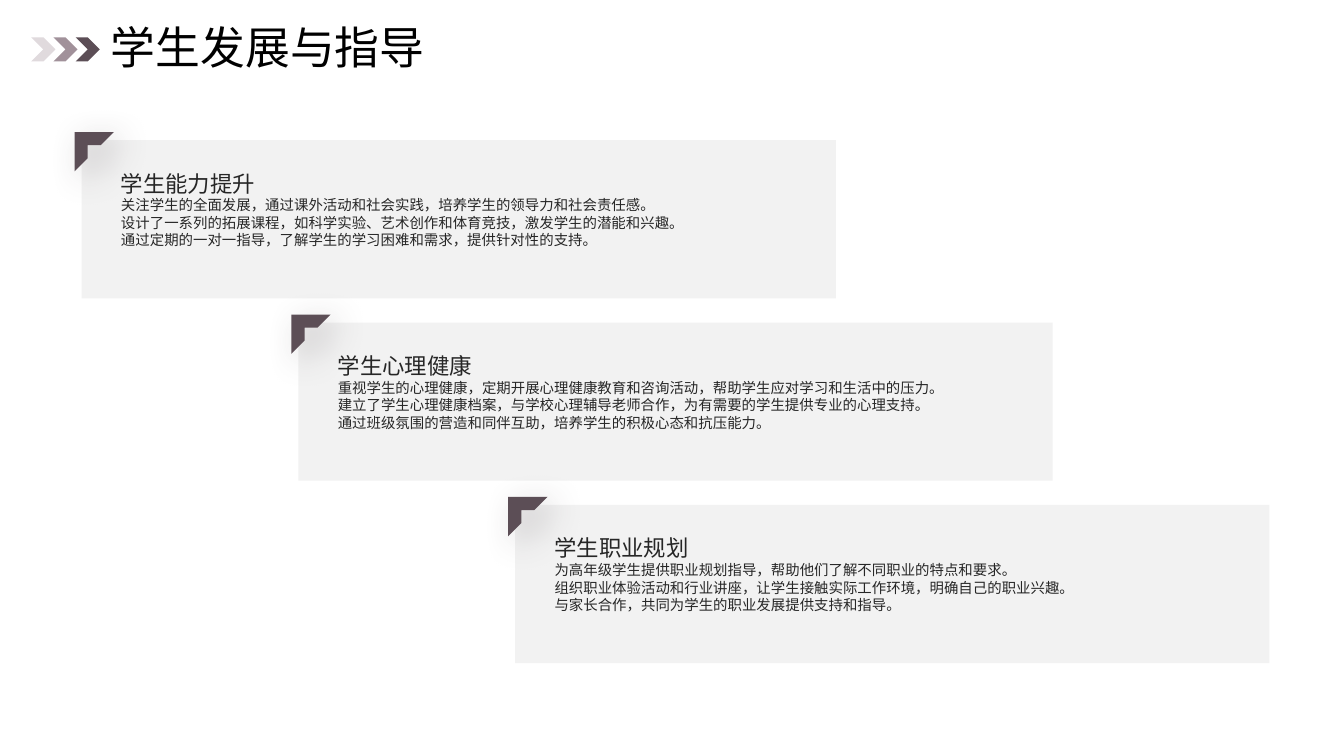
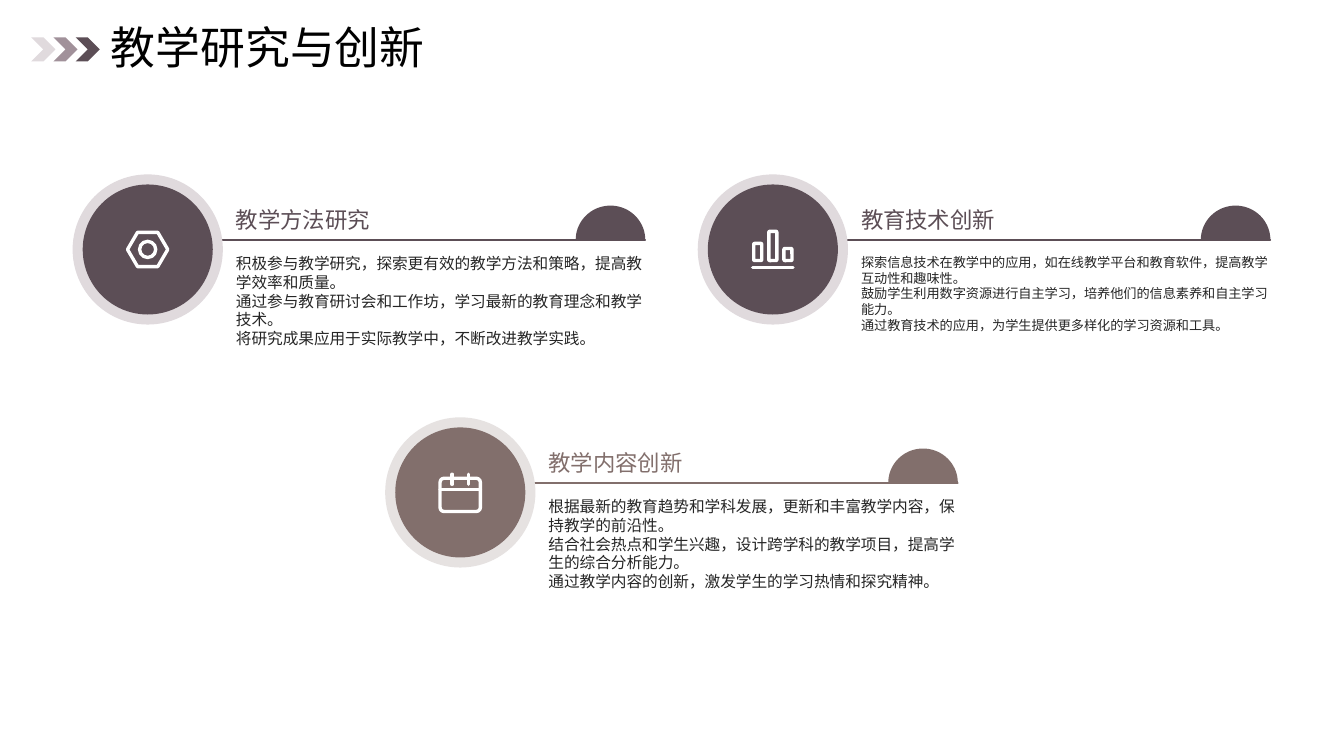
from dataclasses import dataclass
from math import cos, pi, sin
from typing import Callable

from lxml.etree import SubElement
from pptx import Presentation
from pptx.dml.color import RGBColor
from pptx.enum.shapes import MSO_CONNECTOR, MSO_SHAPE
from pptx.enum.text import MSO_ANCHOR
from pptx.oxml.ns import qn
from pptx.util import Inches, Pt

FONT = "Noto Sans CJK SC"
PLUM = RGBColor(0x5C, 0x4E, 0x56)
MAUVE = RGBColor(0xA1, 0x91, 0x9A)
PALE_MAUVE = RGBColor(0xE0, 0xDA, 0xDD)
BROWN = RGBColor(0x82, 0x6F, 0x6C)
PALE_BROWN = RGBColor(0xE6, 0xE2, 0xE1)
PANEL = RGBColor(0xF2, 0xF2, 0xF2)
INK = RGBColor(0x26, 0x26, 0x26)
BLACK = RGBColor(0, 0, 0)
WHITE = RGBColor(0xFF, 0xFF, 0xFF)
ICON_PT = 2.4
RING, DISC = 1.49, 1.29


@dataclass(frozen=True)
class Card:
    heading: str
    body: str


@dataclass(frozen=True)
class Topic:
    x: float
    y: float
    heading: str
    body: str
    size: float
    color: RGBColor
    ring: RGBColor
    icon: Callable


CARDS = [
    Card("学生能力提升",
         "关注学生的全面发展，通过课外活动和社会实践，培养学生的领导力和社会责任感。\n"
         "设计了一系列的拓展课程，如科学实验、艺术创作和体育竞技，激发学生的潜能和兴趣。\n"
         "通过定期的一对一指导，了解学生的学习困难和需求，提供针对性的支持。"),
    Card("学生心理健康",
         "重视学生的心理健康，定期开展心理健康教育和咨询活动，帮助学生应对学习和生活中的压力。\n"
         "建立了学生心理健康档案，与学校心理辅导老师合作，为有需要的学生提供专业的心理支持。\n"
         "通过班级氛围的营造和同伴互助，培养学生的积极心态和抗压能力。"),
    Card("学生职业规划",
         "为高年级学生提供职业规划指导，帮助他们了解不同职业的特点和要求。\n"
         "组织职业体验活动和行业讲座，让学生接触实际工作环境，明确自己的职业兴趣。\n"
         "与家长合作，共同为学生的职业发展提供支持和指导。"),
]


def paint(sp, color: RGBColor) -> None:
    sp.shadow.inherit = False
    sp.fill.solid()
    sp.fill.fore_color.rgb = color
    sp.line.fill.background()


def add_filled(s, kind, x: float, y: float, w: float, h: float, color: RGBColor):
    sp = s.shapes.add_shape(kind, Inches(x), Inches(y), Inches(w), Inches(h))
    paint(sp, color)
    return sp


def stroke(sp) -> None:
    """Leave only a white, round-capped icon outline."""
    sp.shadow.inherit = False
    sp.fill.background()
    sp.line.color.rgb = WHITE
    sp.line.width = Pt(ICON_PT)
    sp.line._get_or_add_ln().set("cap", "rnd")


def add_outline(s, kind, x: float, y: float, w: float, h: float, radius: float = 0) -> None:
    sp = s.shapes.add_shape(kind, Inches(x), Inches(y), Inches(w), Inches(h))
    if radius:
        sp.adjustments[0] = radius / min(w, h)
    stroke(sp)


def add_line(s, x1: float, y1: float, x2: float, y2: float, color: RGBColor, width: float):
    line = s.shapes.add_connector(MSO_CONNECTOR.STRAIGHT, Inches(x1), Inches(y1),
                                  Inches(x2), Inches(y2))
    line.line.color.rgb = color
    line.line.width = Pt(width)
    line.line._get_or_add_ln().set("cap", "rnd")
    SubElement(line._element.spPr, qn("a:effectLst"))


def add_polygon(s, points: list[tuple[float, float]]):
    corners = [(Inches(x), Inches(y)) for x, y in points]
    builder = s.shapes.build_freeform(*corners[0], scale=1.0)
    builder.add_line_segments(corners[1:], close=True)
    return builder.convert_to_shape()


def add_text(s, x: float, y: float, w: float, h: float, text: str, size: float,
             color: RGBColor, anchor=MSO_ANCHOR.TOP) -> None:
    tf = s.shapes.add_textbox(Inches(x), Inches(y), Inches(w), Inches(h)).text_frame
    frame_format = {"word_wrap": True, "vertical_anchor": anchor, "margin_left": 0,
                    "margin_right": 0, "margin_top": 0, "margin_bottom": 0}
    for name, value in frame_format.items():
        setattr(tf, name, value)
    tf.text = text
    for p in tf.paragraphs:
        p.line_spacing = Pt(round(1.2 * size, 1))
        for r in p.runs:
            for name, value in {"name": FONT, "size": Pt(size)}.items():
                setattr(r.font, name, value)
            r.font.color.rgb = color
            SubElement(r._r.get_or_add_rPr(), qn("a:ea"), typeface=FONT)


def add_soft_shadow(sp) -> None:
    effects = sp._element.spPr.find(qn("a:effectLst"))
    shadow = SubElement(effects, qn("a:outerShdw"), blurRad=str(Pt(25)), dist=str(Pt(10)),
                        dir=str(45 * 60000), algn="tl", rotWithShape="0")
    color = SubElement(shadow, qn("a:srgbClr"), val="453B40")
    SubElement(color, qn("a:alpha"), val="30000")


def add_titled_slide(prs, title: str):
    s = prs.slides.add_slide(prs.slide_layouts[6])
    add_text(s, 1.1, 0.23, 11.7, 0.47, title, 32, BLACK, MSO_ANCHOR.MIDDLE)
    for i, color in enumerate((PLUM, MAUVE, PALE_MAUVE)):
        add_filled(s, MSO_SHAPE.CHEVRON, 0.75 - 0.22 * i, 0.37, 0.24, 0.24, color)
    return s


def add_card(s, x: float, y: float, card: Card) -> None:
    add_filled(s, MSO_SHAPE.RECTANGLE, x, y, 7.48, 1.57, PANEL)
    add_text(s, x + 0.39, y + 0.17, 6.69, 0.39, card.heading, 16, INK, MSO_ANCHOR.BOTTOM)
    add_text(s, x + 0.39, y + 0.56, 6.69, 0.87, card.body, 10.3, INK)
    corner = add_filled(s, MSO_SHAPE.HALF_FRAME, x - 0.07, y - 0.08, 0.39, 0.39, PLUM)
    add_soft_shadow(corner)


def add_nut_icon(s, cx: float, cy: float) -> None:
    hexagon = [(-0.2, 0), (-0.1, -0.17), (0.1, -0.17), (0.2, 0), (0.1, 0.17), (-0.1, 0.17)]
    stroke(add_polygon(s, [(cx + dx, cy + dy) for dx, dy in hexagon]))
    add_outline(s, MSO_SHAPE.OVAL, cx - 0.08, cy - 0.08, 0.16, 0.16)


def add_bars_icon(s, cx: float, cy: float) -> None:
    for i, height in enumerate((0.17, 0.29, 0.12)):
        add_outline(s, MSO_SHAPE.ROUNDED_RECTANGLE, cx - 0.19 + 0.15 * i,
                    cy + 0.11 - height, 0.08, height, 0.01)
    add_line(s, cx - 0.2, cy + 0.18, cx + 0.2, cy + 0.18, WHITE, ICON_PT)


def add_calendar_icon(s, cx: float, cy: float) -> None:
    add_outline(s, MSO_SHAPE.ROUNDED_RECTANGLE, cx - 0.2, cy - 0.14, 0.4, 0.33, 0.04)
    add_line(s, cx - 0.2, cy - 0.03, cx + 0.2, cy - 0.03, WHITE, ICON_PT)
    for dx in (-0.08, 0.08):
        add_line(s, cx + dx, cy - 0.18, cx + dx, cy - 0.08, WHITE, ICON_PT)


def add_dome(s, x: float, y: float, w: float, h: float, color: RGBColor) -> None:
    """Draw a half ellipse standing on its flat side."""
    steps = 36
    angles = [pi * (1 - i / steps) for i in range(steps + 1)]
    paint(add_polygon(s, [(x + w / 2 * (1 + cos(a)), y + h * (1 - sin(a))) for a in angles]),
          color)


def add_topic(s, t: Topic) -> None:
    rule_y, text_x, right = t.y + 0.65, t.x + 1.62, t.x + 5.68
    add_line(s, t.x + 1.34, rule_y, right, rule_y, t.color, 1)
    add_filled(s, MSO_SHAPE.OVAL, t.x, t.y, RING, RING, t.ring)
    inset = (RING - DISC) / 2
    add_filled(s, MSO_SHAPE.OVAL, t.x + inset, t.y + inset, DISC, DISC, t.color)
    add_text(s, text_x, t.y - 0.25, 3.24, 0.83, t.heading, 16, t.color, MSO_ANCHOR.BOTTOM)
    add_text(s, text_x, t.y + 0.79, 4.06, 1.23, t.body, t.size, INK)
    add_dome(s, right - 0.69, rule_y - 0.34, 0.69, 0.34, t.color)
    t.icon(s, t.x + RING / 2, t.y + RING / 2)


TOPICS = [
    Topic(0.72, 1.73, "教学方法研究",
          "积极参与教学研究，探索更有效的教学方法和策略，提高教学效率和质量。\n"
          "通过参与教育研讨会和工作坊，学习最新的教育理念和教学技术。\n"
          "将研究成果应用于实际教学中，不断改进教学实践。",
          11.2, PLUM, PALE_MAUVE, add_nut_icon),
    Topic(6.92, 1.73, "教育技术创新",
          "探索信息技术在教学中的应用，如在线教学平台和教育软件，提高教学互动性和趣味性。\n"
          "鼓励学生利用数字资源进行自主学习，培养他们的信息素养和自主学习能力。\n"
          "通过教育技术的应用，为学生提供更多样化的学习资源和工具。",
          9.4, PLUM, PALE_MAUVE, add_bars_icon),
    Topic(3.82, 4.14, "教学内容创新",
          "根据最新的教育趋势和学科发展，更新和丰富教学内容，保持教学的前沿性。\n"
          "结合社会热点和学生兴趣，设计跨学科的教学项目，提高学生的综合分析能力。\n"
          "通过教学内容的创新，激发学生的学习热情和探究精神。",
          11.2, BROWN, PALE_BROWN, add_calendar_icon),
]


def main() -> None:
    prs = Presentation()
    prs.slide_width, prs.slide_height = Inches(13.33), Inches(7.5)

    s = add_titled_slide(prs, "学生发展与指导")
    for i, card in enumerate(CARDS):
        add_card(s, 0.81 + 2.15 * i, 1.39 + 1.81 * i, card)

    s = add_titled_slide(prs, "教学研究与创新")
    for topic in TOPICS:
        add_topic(s, topic)

    prs.save("out.pptx")


if __name__ == "__main__":
    main()
